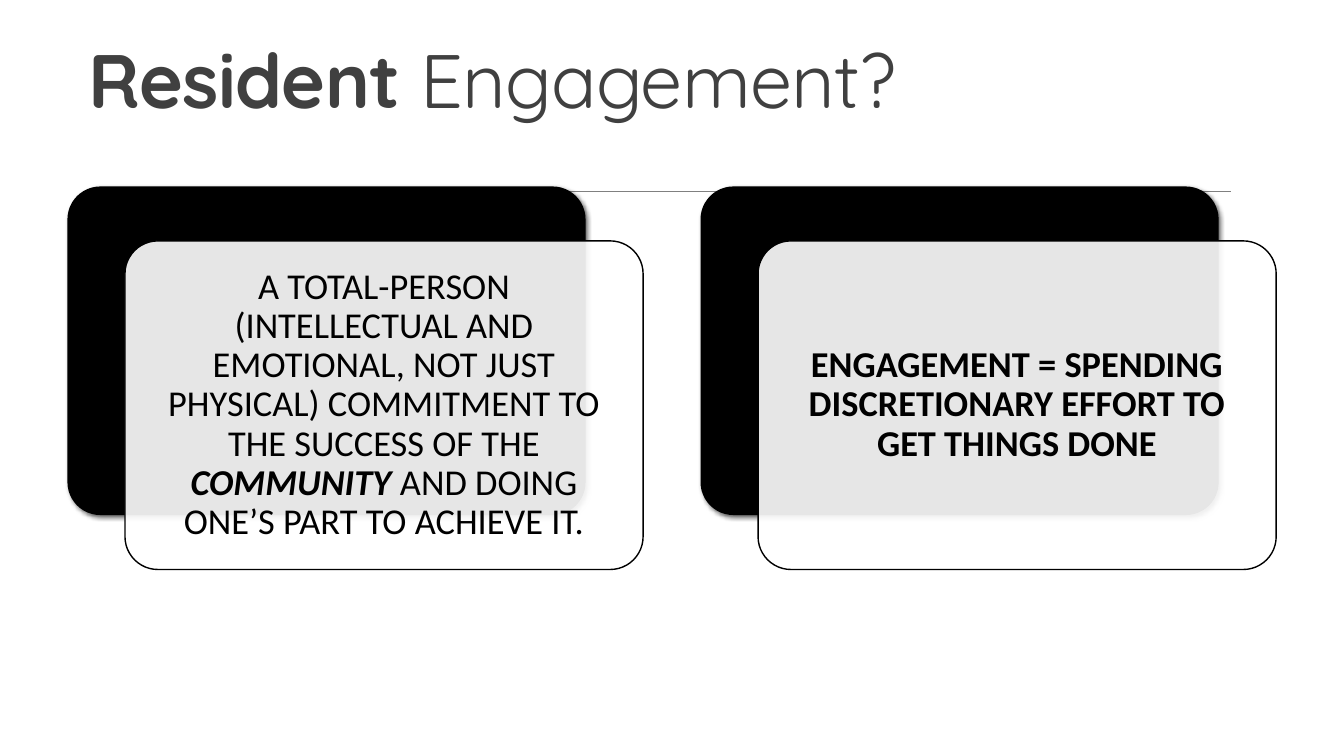
from lxml import etree
from pptx import Presentation
from pptx.dml.color import RGBColor
from pptx.enum.shapes import MSO_CONNECTOR, MSO_SHAPE
from pptx.enum.text import MSO_ANCHOR, MSO_AUTO_SIZE, PP_ALIGN
from pptx.oxml.ns import qn
from pptx.util import Pt

STRAIGHT = MSO_CONNECTOR.STRAIGHT
ROUNDED = MSO_SHAPE.ROUNDED_RECTANGLE
MIDDLE = MSO_ANCHOR.MIDDLE
NO_AUTOFIT = MSO_AUTO_SIZE.NONE
LEFT, CENTER = PP_ALIGN.LEFT, PP_ALIGN.CENTER

CARD_WIDTH, CARD_HEIGHT = 370.1, 234.7
FIRST_LEFT, CARD_TOP = 48.2, 133.2
CARD_STEP = 452.2
FRONT_RIGHT, FRONT_DOWN = 41.1, 38.9
TEXT_MARGIN = 6.85

DEFINITIONS = [
    [
        ("A TOTAL-PERSON (INTELLECTUAL AND EMOTIONAL, NOT JUST PHYSICAL) "
         "COMMITMENT TO THE SUCCESS OF THE ", {}),
        ("COMMUNITY", {"bold": True, "italic": True}),
        (" AND DOING ONE’S PART TO ACHIEVE IT.", {}),
    ],
    [("ENGAGEMENT = SPENDING DISCRETIONARY EFFORT TO GET THINGS DONE", {"bold": True})],
]


def color(hex_value):
    return RGBColor.from_string(hex_value)


def apply(target, values):
    for attribute, value in values.items():
        setattr(target, attribute, value)


def add_alpha(color_element, percent):
    etree.SubElement(color_element, qn("a:alpha"), val=str(percent * 1000))


class SlideBuilder:
    title_font = {"name": "Quicksand", "size": Pt(54)}
    body_font = {"name": "Calibri", "size": Pt(26), "bold": False, "italic": False}
    title_color, ink, paper, rule_color = "404040", "000000", "FFFFFF", "808080"

    def __init__(self, deck):
        self.slide = deck.slides.add_slide(deck.slide_layouts[5])

    def fill_text(self, frame, pieces, font, hex_value, align, spacing, inset):
        margins = dict.fromkeys(
            ("margin_left", "margin_right", "margin_top", "margin_bottom"), Pt(inset))
        apply(frame, {**margins, "word_wrap": True, "auto_size": NO_AUTOFIT,
                      "vertical_anchor": MIDDLE})
        paragraph = frame.paragraphs[0]
        apply(paragraph, {"alignment": align, "line_spacing": spacing})
        for wording, emphasis in pieces:
            run = paragraph.add_run()
            run.text = wording
            apply(run.font, {**font, **emphasis})
            run.font.color.rgb = color(hex_value)
        return paragraph

    def rule(self, left, right, top):
        divider = self.slide.shapes.add_connector(
            STRAIGHT, Pt(left), Pt(top), Pt(right), Pt(top))
        divider.line.color.rgb = color(self.rule_color)
        divider.line.width = Pt(0.5)
        etree.SubElement(divider._element.spPr, qn("a:effectLst"))

    def title(self, pieces, left, top, width, height):
        heading = self.slide.shapes.title
        apply(heading, {"left": Pt(left), "top": Pt(top),
                        "width": Pt(width), "height": Pt(height)})
        paragraph = self.fill_text(heading.text_frame, pieces, self.title_font,
                                   self.title_color, LEFT, 0.85, 3.6)
        apply(heading.text_frame, {"margin_left": Pt(7.2), "margin_right": Pt(7.2)})
        for run in paragraph.runs:
            run._r.get_or_add_rPr().set("spc", "-50")

    def panel(self, shapes, left, top, fill):
        panel = shapes.add_shape(
            ROUNDED, Pt(left), Pt(top), Pt(CARD_WIDTH), Pt(CARD_HEIGHT))
        panel.adjustments[0] = 0.1
        panel.shadow.inherit = False
        panel.fill.solid()
        panel.fill.fore_color.rgb = color(fill)
        return panel

    def back_panel(self, shapes, left, top):
        back = self.panel(shapes, left, top, self.ink)
        back.line.fill.background()
        effects = back._element.spPr.find(qn("a:effectLst"))
        shadow = etree.SubElement(
            effects, qn("a:outerShdw"), blurRad=str(Pt(3)), dist=str(Pt(2)),
            dir=str(45 * 60000), algn="ctr", rotWithShape="0")
        add_alpha(etree.SubElement(shadow, qn("a:srgbClr"), val=self.ink), 60)

    def front_panel(self, shapes, left, top):
        front = self.panel(shapes, left, top, self.paper)
        add_alpha(front._element.spPr.find(f"{qn('a:solidFill')}/{qn('a:srgbClr')}"), 90)
        front.line.color.rgb = color(self.ink)
        front.line.width = Pt(1)

    def card(self, pieces, left, top):
        shapes = self.slide.shapes.add_group_shape().shapes
        front_left, front_top = left + FRONT_RIGHT, top + FRONT_DOWN
        self.back_panel(shapes, left, top)
        self.front_panel(shapes, front_left, front_top)
        definition = shapes.add_textbox(
            Pt(front_left + TEXT_MARGIN), Pt(front_top + TEXT_MARGIN),
            Pt(CARD_WIDTH - 2 * TEXT_MARGIN), Pt(CARD_HEIGHT - 2 * TEXT_MARGIN))
        self.fill_text(definition.text_frame, pieces, self.body_font, self.ink,
                       CENTER, 0.9, 7.8)


def main():
    deck = Presentation()
    deck.slide_width, deck.slide_height = Pt(960), Pt(540)
    builder = SlideBuilder(deck)
    builder.rule(94.3, 879.1, 136.8)
    builder.title([("Resident", {"bold": True}), (" Engagement?", {"bold": False})],
                  56.2, 15.8, 904.3, 90)
    for index, pieces in enumerate(DEFINITIONS):
        builder.card(pieces, FIRST_LEFT + index * CARD_STEP, CARD_TOP)
    deck.save("out.pptx")


if __name__ == "__main__":
    main()
